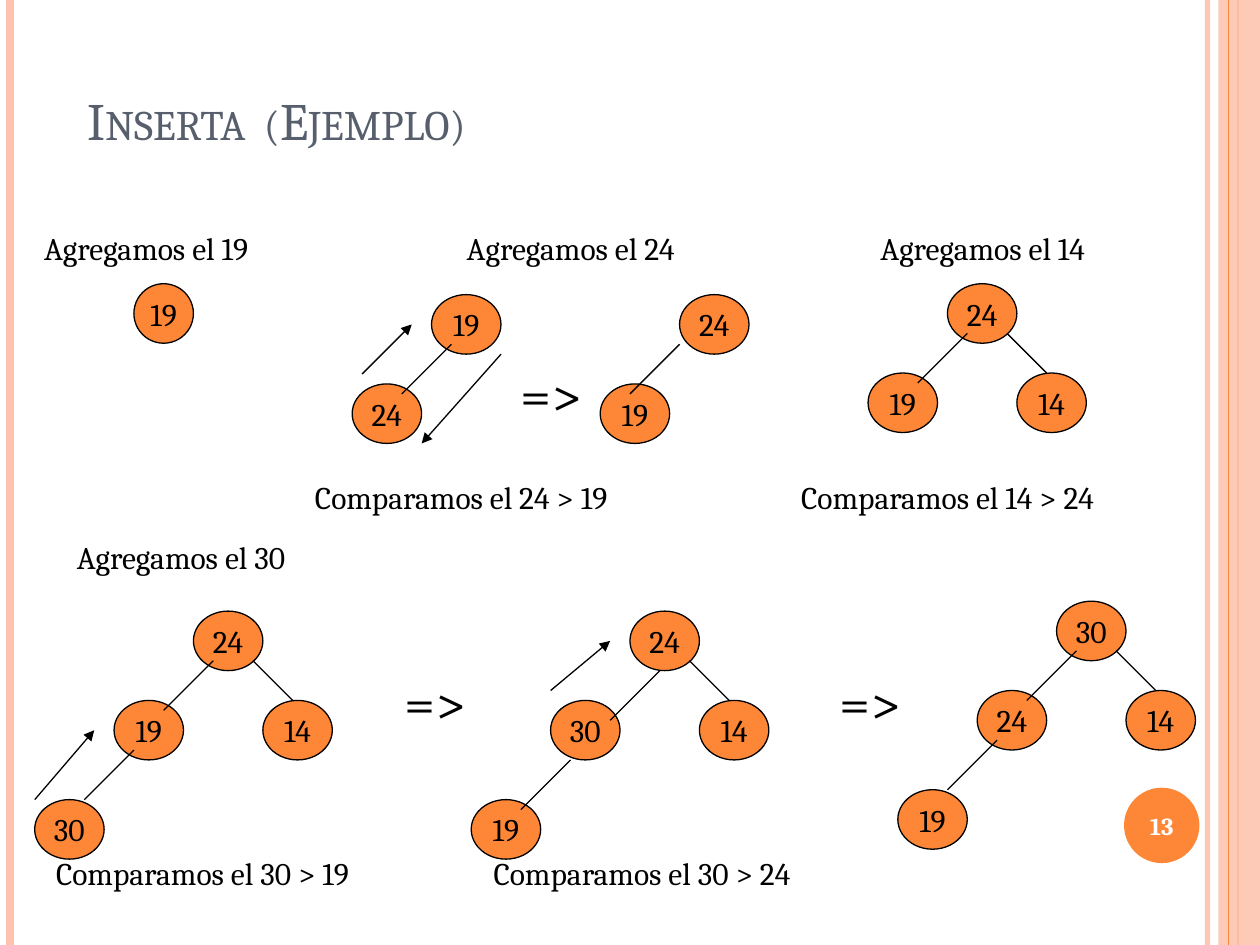
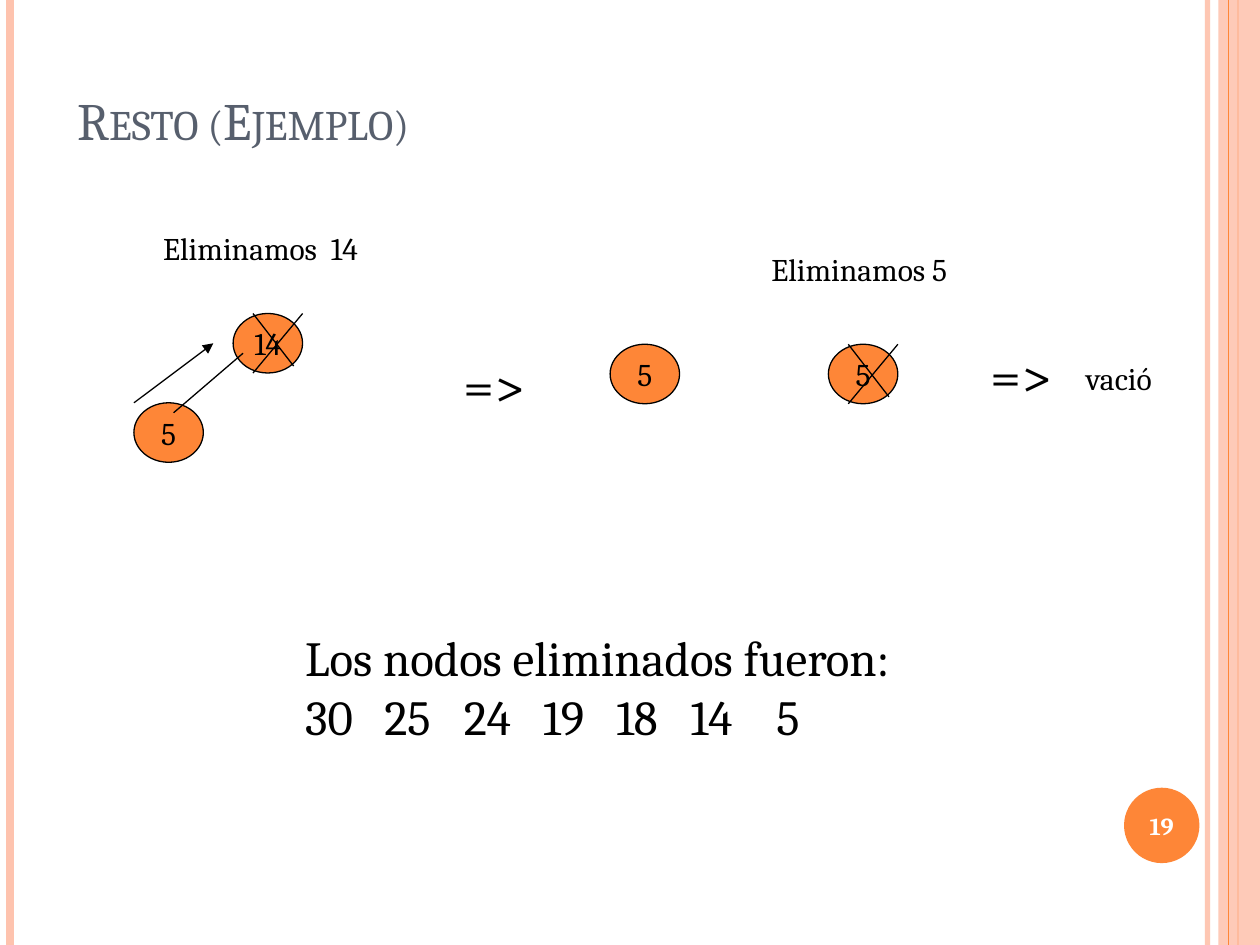
from lxml import etree
from pptx import Presentation
from pptx.dml.color import RGBColor
from pptx.enum.shapes import MSO_CONNECTOR, MSO_SHAPE
from pptx.enum.text import MSO_ANCHOR, MSO_AUTO_SIZE, PP_ALIGN
from pptx.oxml.ns import qn
from pptx.util import Inches, Mm, Pt

STRAIGHT = MSO_CONNECTOR.STRAIGHT
OVAL, RECTANGLE = MSO_SHAPE.OVAL, MSO_SHAPE.RECTANGLE
MIDDLE, BOTTOM = MSO_ANCHOR.MIDDLE, MSO_ANCHOR.BOTTOM
CENTER, LEFT_ALIGN = PP_ALIGN.CENTER, PP_ALIGN.LEFT
NO_AUTOFIT = MSO_AUTO_SIZE.NONE

ORANGE = RGBColor(0xFE, 0x86, 0x37)
PEACH = RGBColor(0xFE, 0xC3, 0xAE)
SLATE = RGBColor(0x57, 0x5F, 0x6D)
BLACK = RGBColor(0, 0, 0)
WHITE = RGBColor(0xFF, 0xFF, 0xFF)
FONT = "Cambria"

CELL = Mm(2)
ROWS = 95.25
NODE_WIDTH, NODE_HEIGHT = 7, 6
TITLE_ONLY = 5

ROOT, LEFT, RIGHT, LEAF = (0, 0), (-8, 9), (7, 9), (-16, 19)
LEFT_LINK, RIGHT_LINK = (2, 5, -3, 10), (6, 5, 10, 9)
LEAF_LINK = (-6, 14, -11, 19)
FULL_LINKS = [LEFT_LINK, RIGHT_LINK, LEAF_LINK]
CROSS = [(7, 0, 2, 6), (2, 0, 6.1, 5.3)]


def cells(*lengths):
    """Convert lengths in grid cells to EMU."""
    return [round(length * CELL) for length in lengths]


def set_alpha(fill_parent, percent):
    """Make the solid colour inside an element partly transparent."""
    colour = next(fill_parent.iter(qn("a:srgbClr")))
    etree.SubElement(colour, qn("a:alpha")).set("val", str(percent * 1000))


def write(paragraph, text, size, colour=BLACK, bold=False):
    """Add one formatted run to a paragraph."""
    run = paragraph.add_run()
    run.text = text
    run.font.name, run.font.size = FONT, Pt(size)
    run.font.color.rgb, run.font.bold = colour, bold
    return run


def line(slide, ends, colour=BLACK, width=0.75, arrow=False):
    """Draw a straight line between two grid points."""
    connector = slide.shapes.add_connector(STRAIGHT, *cells(*ends))
    connector.line.color.rgb, connector.line.width = colour, Pt(width)
    if arrow:
        outline = connector.line._get_or_add_ln()
        etree.SubElement(outline, qn("a:tailEnd")).set("type", "triangle")
    etree.SubElement(connector._element.spPr, qn("a:effectLst"))
    return connector


def solid(slide, kind, box, colour):
    """Draw a flat shape without outline."""
    shape = slide.shapes.add_shape(kind, *cells(*box))
    shape.shadow.inherit = False
    shape.fill.solid()
    shape.fill.fore_color.rgb = colour
    shape.line.fill.background()
    return shape


def disc(slide, box, label, size, colour, bold=False):
    """Draw an orange ellipse with a centred label."""
    shape = solid(slide, OVAL, box, ORANGE)
    frame = shape.text_frame
    frame.word_wrap, frame.vertical_anchor = False, MIDDLE
    frame.paragraphs[0].alignment = CENTER
    write(frame.paragraphs[0], label, size, colour, bold)
    return shape


def node(slide, left, top, label, width=NODE_WIDTH):
    """Draw one outlined tree node."""
    shape = disc(slide, (left, top, width, NODE_HEIGHT), label, 18, BLACK)
    shape.line.color.rgb, shape.line.width = BLACK, Pt(0.75)


def tree(slide, left, top, nodes, links=(), arrows=()):
    """Draw nodes, links and arrows placed relative to the root's corner."""
    for label, (column, row) in nodes:
        node(slide, left + column, top + row, label)
    for group, has_arrow in ((links, False), (arrows, True)):
        for x1, y1, x2, y2 in group:
            ends = (left + x1, top + y1, left + x2, top + y2)
            line(slide, ends, arrow=has_arrow)


def caption(slide, text, left, top, width=29.2, height=5.5, size=18):
    """Add a one-line text and return its frame."""
    frame = slide.shapes.add_textbox(*cells(left, top, width, height)).text_frame
    frame.word_wrap = True
    write(frame.paragraphs[0], text, size)
    return frame


def implies(slide, left, top):
    """Add the sign between two steps."""
    caption(slide, "=>", left, top, 9.1, 8, 32)


def side_bands(slide):
    """Draw the vertical bands at both edges."""
    inner = line(slide, (121.7, 0, 121.7, ROWS), PEACH, 3)
    set_alpha(inner._element.spPr, 93)
    line(slide, (1, 0, 1, ROWS), PEACH, 4.5)
    line(slide, (124.8, 0, 124.8, ROWS), ORANGE, 1.5)
    band = solid(slide, RECTANGLE, (122.8, 0, 4.2, ROWS), PEACH)
    set_alpha(band._element.spPr, 87)
    line(slide, (123.8, 0, 123.8, ROWS), ORANGE)


def framed_slide(deck, title, number, left, width):
    """Add a slide with bands, title and page number."""
    slide = deck.slides.add_slide(deck.slide_layouts[TITLE_ONLY])
    side_bands(slide)
    disc(slide, (113.3, 79.4, 7.6, 7.6), number, 14, WHITE, True)
    heading = slide.shapes.title
    heading.left, heading.top, heading.width, heading.height = cells(left, 0, width, 15.9)
    frame = heading.text_frame
    frame.word_wrap, frame.vertical_anchor = True, BOTTOM
    frame.auto_size = NO_AUTOFIT
    frame.paragraphs[0].alignment = LEFT_ALIGN
    run = write(frame.paragraphs[0], title, 30, SLATE)
    run._r.get_or_add_rPr().set("cap", "small")
    return slide


def first_insertions(slide):
    """Show the insertion of 19, 24 and 14."""
    for value, left in (("19", 3.2), ("24", 45.8), ("14", 87.5)):
        caption(slide, f"Agregamos el {value}", left, 22.5)
    node(slide, 13.5, 28.6, "19", NODE_HEIGHT)
    tree(slide, 43.5, 29.7, [("19", ROOT), ("24", LEFT)], [LEFT_LINK],
         [(-7, 8, -2, 3), (7, 6, -1, 15)])
    implies(slide, 51.2, 35.6)
    tree(slide, 68.5, 29.7, [("24", ROOT), ("19", LEFT)], [(0, 5, -5, 10)])
    tree(slide, 95.5, 28.6, [("24", ROOT), ("19", LEFT), ("14", RIGHT)],
         [LEFT_LINK, RIGHT_LINK])
    caption(slide, "Comparamos el 24 > 19", 30.5, 47.6, 40.3)
    caption(slide, "Comparamos el 14 > 24", 79.5, 47.6, 40.3)


def last_insertion(slide):
    """Show how 30 climbs to the root."""
    caption(slide, "Agregamos el 30", 6.5, 53.6)
    steps = [
        (19.5, 61.6, ("24", "19", "14", "30"), FULL_LINKS, [(-16, 19, -10, 12)]),
        (63.5, 61.6, ("24", "30", "14", "19"),
         [(3, 6, -2, 11), RIGHT_LINK, (-6, 15, -11, 20)], [(-8, 8, -2, 3)]),
        (106.5, 60.6, ("30", "24", "14", "19"), FULL_LINKS, []),
    ]
    for left, top, labels, links, arrows in steps:
        nodes = list(zip(labels, (ROOT, LEFT, RIGHT, LEAF)))
        tree(slide, left, top, nodes, links, arrows)
    for value, left, sign_left in (("19", 4.4, 39.5), ("24", 48.5, 83.4)):
        caption(slide, f"Comparamos el 30 > {value}", left, 85.5, 40.3)
        implies(slide, sign_left, 66.7)


def removals(slide):
    """Show the removal of the last two nodes."""
    caption(slide, "Eliminamos  14", 15.2, 22.5)
    tree(slide, 23.5, 31.6, [("14", ROOT), ("5", (-10, 9))],
         [(1, 4, -6, 10)] + CROSS, [(-10, 9, -2, 3)])
    implies(slide, 45.5, 34.7)
    tree(slide, 61.5, 34.7, [("5", ROOT)])
    caption(slide, "Eliminamos 5", 76.5, 24.6)
    tree(slide, 83.5, 34.7, [("5", ROOT)], CROSS)
    implies(slide, 98.6, 33.7)
    caption(slide, "vació", 108.2, 35.6, 10.8)


def removed_list(slide):
    """List the removed nodes at tab stops."""
    frame = caption(slide, "Los nodos eliminados fueron:", 29.5, 62.6, 67.2, 13.1, 28)
    values = frame.add_paragraph()
    stops = etree.SubElement(values._p.get_or_add_pPr(), qn("a:tabLst"))
    for inches in (0.63, 1.26, 1.89, 2.47, 3.06, 3.74):
        stop = etree.SubElement(stops, qn("a:tab"))
        stop.set("pos", str(Inches(inches)))
        stop.set("algn", "l")
    write(values, "\t".join(("30", "25", "24", "19", "18", "14", "5")), 28)


def main():
    """Build and save the two slides."""
    deck = Presentation()
    deck.slide_width, deck.slide_height = Inches(10), Inches(7.5)
    insertion = framed_slide(deck, "Inserta  (Ejemplo)", "13", 7.5, 108)
    first_insertions(insertion)
    last_insertion(insertion)
    removal = framed_slide(deck, "Resto (Ejemplo)", "19", 6.5, 103.8)
    removals(removal)
    removed_list(removal)
    deck.save("out.pptx")


if __name__ == "__main__":
    main()
